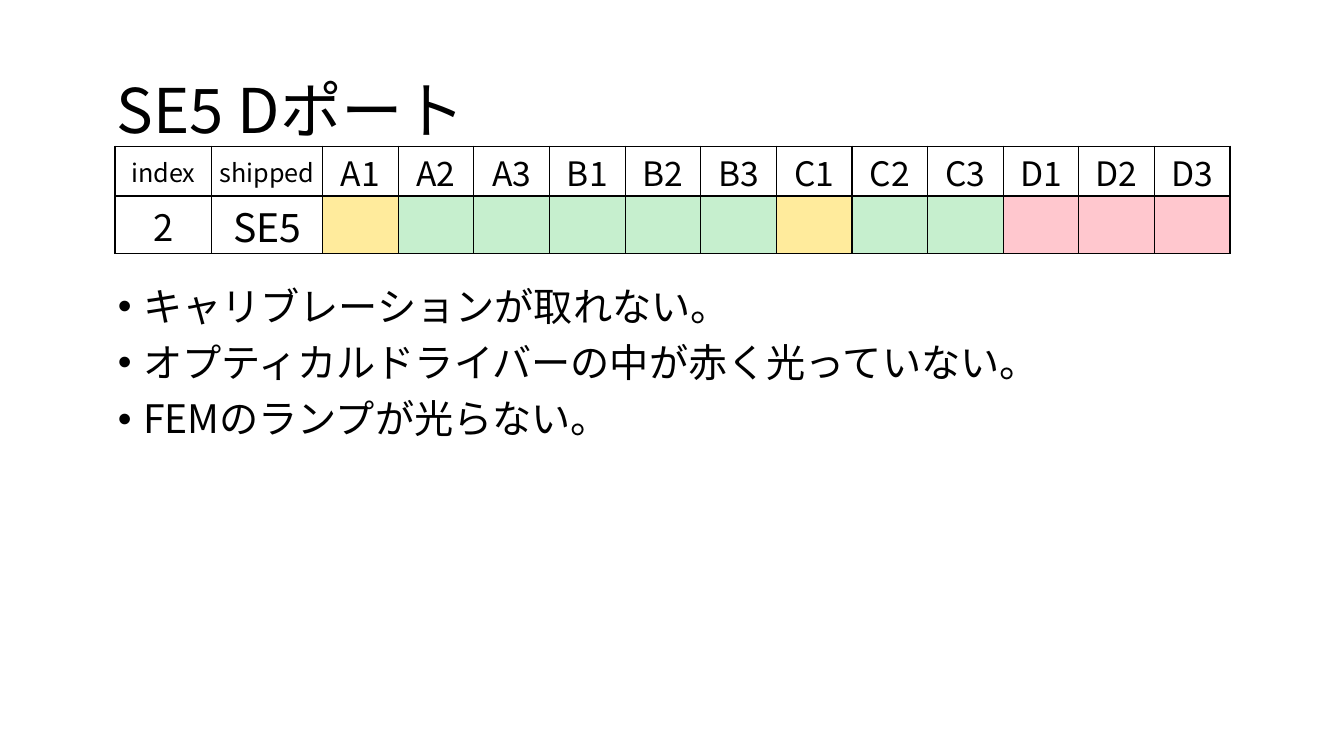
from lxml.etree import SubElement
from pptx import Presentation
from pptx.dml.color import RGBColor
from pptx.enum.text import MSO_ANCHOR as ANCHOR, MSO_AUTO_SIZE as FIT, PP_ALIGN as ALIGN
from pptx.oxml.ns import qn
from pptx.util import Inches, Pt

FONT = "Noto Sans CJK JP"


def rgb(value):
    return RGBColor.from_string(value)


def write(p, text, size, fmt):
    for name, value in fmt.items():
        setattr(p, name, value)
    r = p.add_run()
    r.text = text
    for name, value in {"size": Pt(size), "name": FONT}.items():
        setattr(r.font, name, value)
    r.font.color.rgb = rgb("000000")
    SubElement(r._r.get_or_add_rPr(), qn("a:ea"), typeface=FONT)


prs = Presentation()
prs.slide_width, prs.slide_height = Inches(13.33), Inches(7.5)
s = prs.slides.add_slide(prs.slide_layouts[1])
title, body = s.placeholders

boxes = [
    (title, (0.92, 0.4, 11.5, 1.45), ANCHOR.MIDDLE),
    (body, (1.07, 2.8, 11.5, 4.76), ANCHOR.TOP),
]
for sp, box, anchor in boxes:
    for name, value in zip(("left", "top", "width", "height"), box):
        setattr(sp, name, Inches(value))
    frame_format = {"word_wrap": True, "auto_size": FIT.NONE, "vertical_anchor": anchor}
    for name, value in frame_format.items():
        setattr(sp.text_frame, name, value)

title_format = {"alignment": ALIGN.LEFT, "line_spacing": 0.9}
write(title.text_frame.paragraphs[0], " SE5 Dポート", 44, title_format)

bullets = [
    "キャリブレーションが取れない。",
    "オプティカルドライバーの中が赤く光っていない。",
    "FEMのランプが光らない。",
]
bullet_format = {"alignment": ALIGN.LEFT, "line_spacing": 0.9, "space_before": Pt(10)}
tf = body.text_frame
for i, text in enumerate(bullets):
    p = tf.add_paragraph() if i else tf.paragraphs[0]
    write(p, text, 28, bullet_format)
    pPr = p._p.get_or_add_pPr()
    pPr.set("marL", str(Inches(0.25)))
    pPr.set("indent", str(-Inches(0.25)))
    SubElement(pPr, qn("a:buFont"), typeface="Arial")
    SubElement(pPr, qn("a:buChar"), char="•")

ports = [letter + number for letter in "ABCD" for number in "123"]
headers = ["index", "shipped"] + ports
values = ["2", "SE5"] + [""] * len(ports)
sizes = [[18, 18] + [24] * len(ports), [26, 28] + [18] * len(ports)]
status_fills = {"A1": "FFEB9C", "C1": "FFEB9C", "D1": "FFC7CE", "D2": "FFC7CE", "D3": "FFC7CE"}
widths = [0.96, 1.1] + [0.75] * len(ports)
heights = [0.49, 0.57]

frame = s.shapes.add_table(2, len(headers), Inches(1.14), Inches(1.45),
                           Inches(sum(widths)), Inches(sum(heights)))
table = frame.table
table.first_row = table.horz_banding = False
for column, width in zip(table.columns, widths):
    column.width = Inches(width)
for row, height in zip(table.rows, heights):
    row.height = Inches(height)

cell_format = {
    "vertical_anchor": ANCHOR.MIDDLE,
    "margin_left": Inches(0.01),
    "margin_top": Inches(0.01),
    "margin_right": Inches(0.01),
    "margin_bottom": 0,
}
for i, texts in enumerate([headers, values]):
    for j, text in enumerate(texts):
        cell = table.cell(i, j)
        for name, value in cell_format.items():
            setattr(cell, name, value)
        tcPr = cell._tc.get_or_add_tcPr()
        for side in ("lnL", "lnR", "lnT", "lnB"):
            ln = SubElement(tcPr, qn("a:" + side), w=str(Pt(1)))
            SubElement(SubElement(ln, qn("a:solidFill")), qn("a:srgbClr"), val="000000")
        if text:
            write(cell.text_frame.paragraphs[0], text, sizes[i][j], {"alignment": ALIGN.CENTER})
            cell.fill.background()
        else:
            cell.fill.solid()
            cell.fill.fore_color.rgb = rgb(status_fills.get(headers[j], "C6EFCE"))

prs.save("out.pptx")
